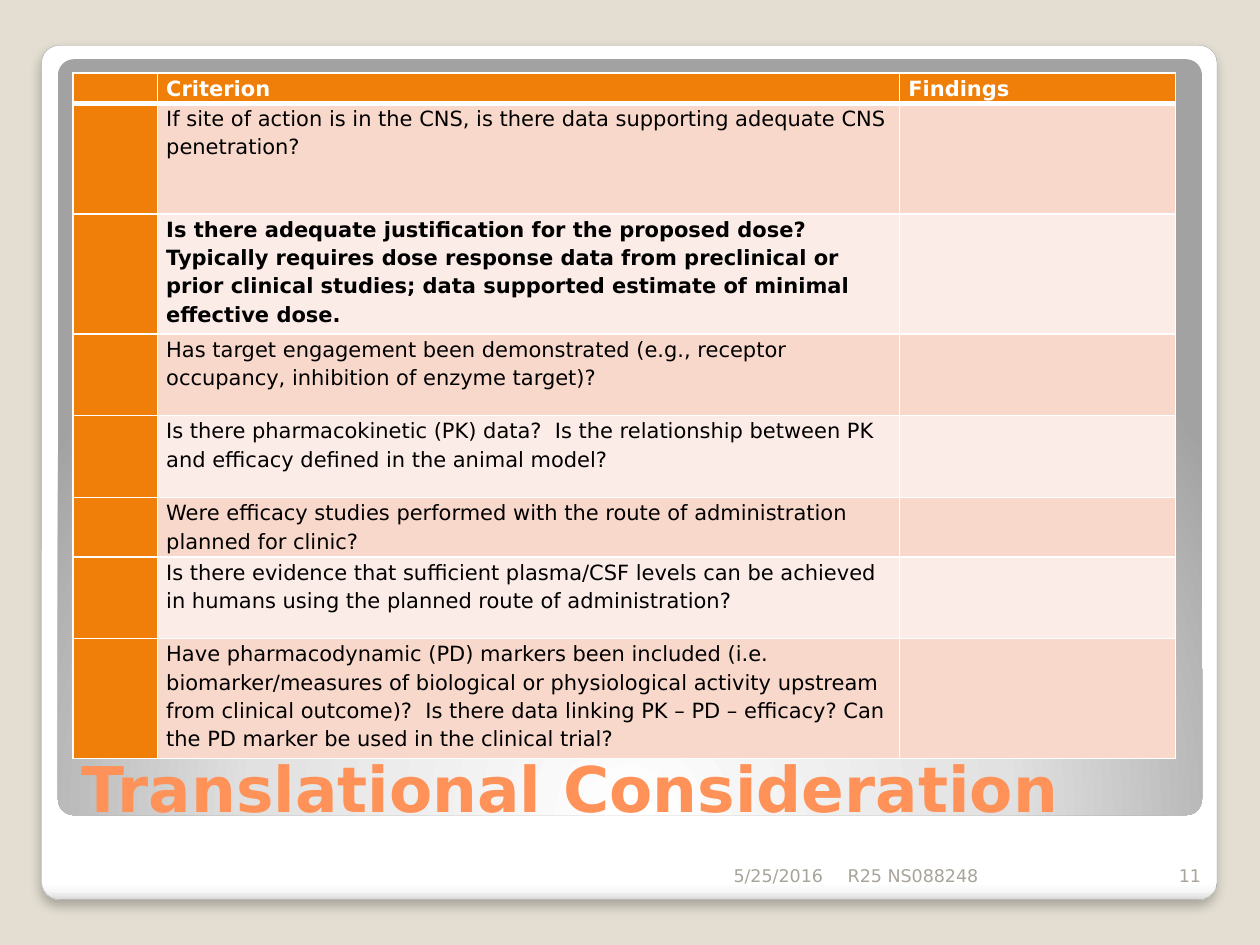
from typing import NamedTuple

from lxml import etree
from pptx import Presentation, oxml
from pptx.dml.color import RGBColor
from pptx.enum import shapes, text
from pptx.oxml import ns
from pptx.util import Inches, Pt

FONT = "DejaVu Sans"
BACKGROUND = RGBColor(0xE3, 0xDE, 0xD1)
WHITE = RGBColor(0xFF, 0xFF, 0xFF)
BLACK = RGBColor(0, 0, 0)
CORAL = RGBColor(0xFF, 0x92, 0x58)
ORANGE = RGBColor(0xF0, 0x7F, 0x09)
BAND_DARK = RGBColor(0xF9, 0xD8, 0xCC)
BAND_LIGHT = RGBColor(0xFC, 0xEC, 0xE7)
EDGE = RGBColor(0xA4, 0xA4, 0xA4)
FOOTER_GREY = RGBColor(0xA8, 0xA4, 0x9B)


class Panel(NamedTuple):
    box: tuple
    stops: tuple
    shade: str
    edged: bool


class Criterion(NamedTuple):
    height: float
    question: str
    bold: bool = False


class Footer(NamedTuple):
    left: float
    width: float
    words: str
    align: text.PP_ALIGN


PANELS = (
    Panel((0.33, 0.36, 9.33, 6.78),
          ((0, "FFFFFF"), (98, "FFFFFF"), (99, "F7F7F7"), (100, "DADADA")),
          '<a:lin ang="5400000" scaled="0"/>', True),
    Panel((0.46, 0.47, 9.08, 6),
          ((0, "FFFFFF"), (55, "E1E1E1"), (100, "A2A2A2")),
          '<a:path path="circle"><a:fillToRect l="50000" t="175000" r="50000" '
          'b="-75000"/></a:path>', False),
)
COLUMNS = (0.67, 5.89, 2.19)
HEADER_HEIGHT = 0.24
CRITERIA = (
    Criterion(0.88, "If site of action is in the CNS, is there data supporting adequate "
              "CNS penetration?"),
    Criterion(0.95, "Is there adequate justification for the proposed dose?  Typically "
              "requires dose response data from preclinical or prior clinical studies; "
              "data supported estimate of minimal effective dose.", True),
    Criterion(0.65, "Has target engagement been demonstrated (e.g., receptor occupancy, "
              "inhibition of enzyme target)?"),
    Criterion(0.65, "Is there pharmacokinetic (PK) data?  Is the relationship between PK "
              "and efficacy defined in the animal model?"),
    Criterion(0.47, "Were efficacy studies performed with the route of administration "
              "planned for clinic?"),
    Criterion(0.65, "Is there evidence that sufficient plasma/CSF levels can be achieved "
              "in humans using the planned route of administration?"),
    Criterion(0.95, "Have pharmacodynamic (PD) markers been included (i.e. "
              "biomarker/measures of biological or physiological activity upstream from "
              "clinical outcome)?  Is there data linking PK – PD – efficacy? Can the PD "
              "marker be used in the clinical trial?"),
)
FOOTERS = (
    Footer(4.13, 2.5, "5/25/2016", text.PP_ALIGN.RIGHT),
    Footer(6.63, 2.5, "R25 NS088248", text.PP_ALIGN.LEFT),
    Footer(9.13, 0.5, "11", text.PP_ALIGN.RIGHT),
)
SHADOW = ('<a:effectLst %s><a:outerShdw blurRad="76200" dist="50800" dir="5400000">'
          '<a:srgbClr val="000000"><a:alpha val="25000"/></a:srgbClr></a:outerShdw>'
          '</a:effectLst>' % ns.nsdecls("a"))


def write(p, words: str, size: float, color: RGBColor, bold: bool = False) -> None:
    r = p.add_run()
    r.text = words
    r.font.color.rgb = color
    for name, value in {"name": FONT, "size": Pt(size), "bold": bold}.items():
        setattr(r.font, name, value)


def add_panel(slide, panel: Panel) -> None:
    sp = slide.shapes.add_shape(shapes.MSO_SHAPE.ROUNDED_RECTANGLE,
                                *map(Inches, panel.box))
    sp.adjustments[0] = 0.021
    stops = "".join(f'<a:gs pos="{pos * 1000}"><a:srgbClr val="{color}"/></a:gs>'
                    for pos, color in panel.stops)
    grad = oxml.parse_xml(f'<a:gradFill {ns.nsdecls("a")} rotWithShape="1">'
                          f'<a:gsLst>{stops}</a:gsLst>{panel.shade}</a:gradFill>')
    sp._element.spPr.find(ns.qn("a:prstGeom")).addnext(grad)
    if panel.edged:
        sp.line.color.rgb = EDGE
        sp.line.width = Pt(0.16)
        sp._element.spPr.append(oxml.parse_xml(SHADOW))
    else:
        sp.line.fill.background()
        sp.shadow.inherit = False


def style_cell(cell, fill: RGBColor, bottom: float = 1, top: float = 1) -> None:
    margins = {"margin_left": 0.07, "margin_right": 0.07, "margin_top": 0, "margin_bottom": 0}
    for name, value in margins.items():
        setattr(cell, name, Inches(value))
    tc_pr = cell._tc.get_or_add_tcPr()
    for side, width in {"L": 1, "R": 1, "T": top, "B": bottom}.items():
        tc_pr.append(oxml.parse_xml(
            f'<a:ln{side} {ns.nsdecls("a")} w="{Pt(width)}"><a:solidFill>'
            f'<a:srgbClr val="{WHITE}"/></a:solidFill></a:ln{side}>'))
    cell.fill.solid()
    cell.fill.fore_color.rgb = fill


def fill_row(table, row: int, words: tuple, fills: tuple, color: RGBColor,
             bold: bool) -> None:
    for col, (content, fill) in enumerate(zip(words, fills)):
        cell = table.cell(row, col)
        style_cell(cell, fill, 3 if row == 0 else 1, 3 if row == 1 else 1)
        p = cell.text_frame.paragraphs[0]
        p.line_spacing = 1.15
        if content:
            write(p, content, 12, color, bold)
        else:
            # Keep empty cells from stretching their row
            etree.SubElement(p._p, ns.qn("a:endParaRPr"), sz="1200")


def add_criteria_table(slide) -> None:
    heights = [HEADER_HEIGHT] + [c.height for c in CRITERIA]
    table = slide.shapes.add_table(
        len(heights), len(COLUMNS), Inches(0.58), Inches(0.58),
        Inches(sum(COLUMNS)), Inches(sum(heights))).table
    for column, width in zip(table.columns, COLUMNS):
        column.width = Inches(width)
    for row, height in zip(table.rows, heights):
        row.height = Inches(height)
    fill_row(table, 0, ("", "Criterion", "Findings"), (ORANGE,) * 3, WHITE, True)
    for i, c in enumerate(CRITERIA, 1):
        band = BAND_DARK if i % 2 else BAND_LIGHT
        fill_row(table, i, ("", c.question, ""), (ORANGE, band, band), BLACK, c.bold)


def add_footer(slide, footer: Footer) -> None:
    tf = slide.shapes.add_textbox(Inches(footer.left), Inches(6.68),
                                  Inches(footer.width), Inches(0.4)).text_frame
    tf.word_wrap = True
    tf.vertical_anchor = text.MSO_ANCHOR.BOTTOM
    p = tf.paragraphs[0]
    p.alignment = footer.align
    write(p, footer.words, 10, FOOTER_GREY)


def place_title(slide) -> None:
    title = slide.shapes.title
    box = {"left": 0.55, "top": 5.45, "width": 8.95, "height": 1.15}
    for name, value in box.items():
        setattr(title, name, Inches(value))
    tf = title.text_frame
    tf.auto_size = text.MSO_AUTO_SIZE.NONE
    tf.vertical_anchor = text.MSO_ANCHOR.BOTTOM
    p = tf.paragraphs[0]
    p.alignment = text.PP_ALIGN.LEFT
    write(p, "Translational Consideration", 36, CORAL, True)
    # Bring the title in front of the panels
    slide.shapes._spTree.append(title._element)


def main() -> None:
    prs = Presentation()
    prs.slide_width, prs.slide_height = Inches(10), Inches(7.5)
    slide = prs.slides.add_slide(prs.slide_layouts[5])
    slide.background.fill.solid()
    slide.background.fill.fore_color.rgb = BACKGROUND

    for panel in PANELS:
        add_panel(slide, panel)
    place_title(slide)
    add_criteria_table(slide)
    for footer in FOOTERS:
        add_footer(slide, footer)
    prs.save("out.pptx")


if __name__ == "__main__":
    main()
